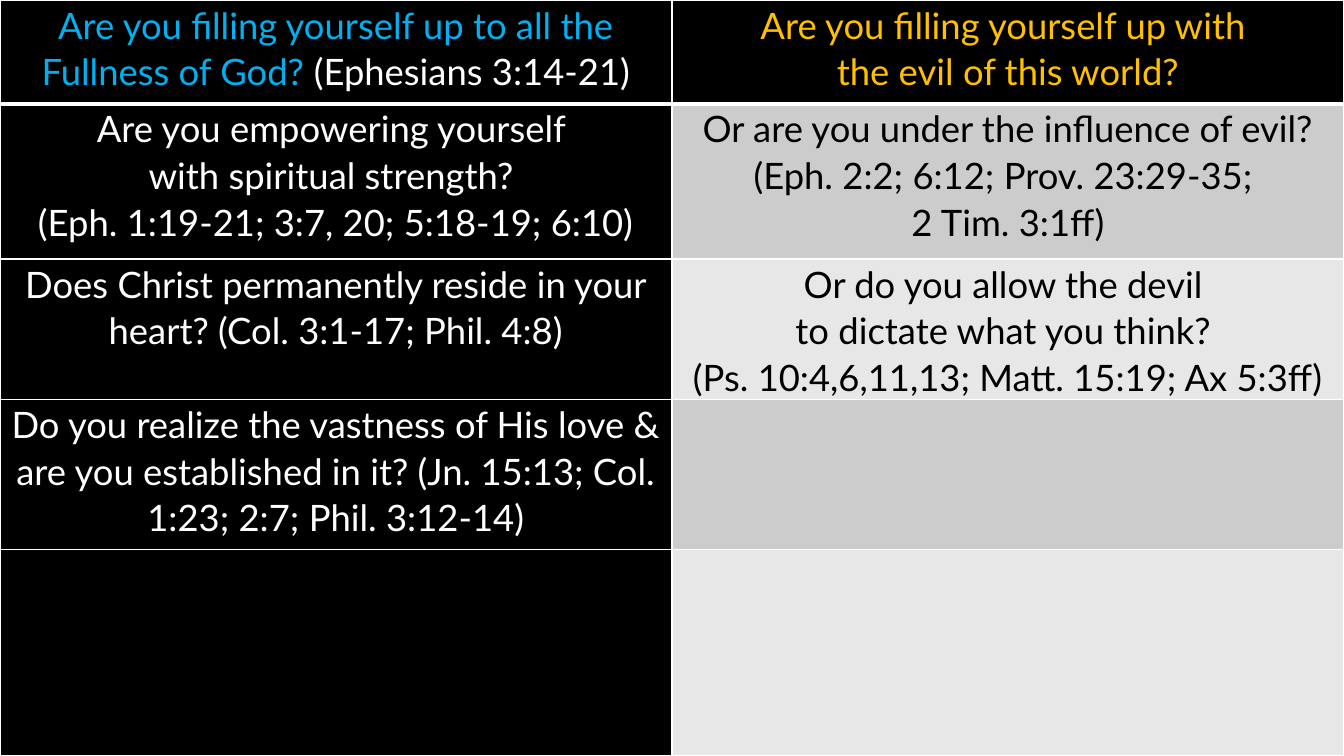
from dataclasses import dataclass

from lxml import etree
from pptx import Presentation, util as u
from pptx.dml.color import RGBColor
from pptx.enum import text
from pptx.oxml import ns


@dataclass(frozen=True)
class Theme:
    font: str = "Lato"
    size: float = 26
    lead: float = 1.07
    inset: float = 0.07
    thin: float = 1
    thick: float = 3
    black: str = "000000"
    white: str = "FFFFFF"
    blue: str = "00B0F0"
    gold: str = "FFC000"
    dark: str = "CCCCCC"
    light: str = "E7E7E7"


class Deck:
    def __init__(self, theme, width, height):
        self.theme = theme
        self.deck = Presentation()
        self.deck.slide_width = u.Inches(width)
        self.deck.slide_height = u.Inches(height)
        self.slide = None

    def page(self, color):
        self.slide = self.deck.slides.add_slide(self.deck.slide_layouts[6])
        fill = self.slide.background.fill
        fill.solid()
        fill.fore_color.rgb = RGBColor.from_string(color)

    def grid(self, cols, rows):
        width, height = self.deck.slide_width, self.deck.slide_height
        frame = self.slide.shapes.add_table(len(rows), len(cols), 0, 0, width, height)
        table = frame.table
        table.first_row = table.horz_banding = False
        for col, share in zip(table.columns, cols):
            col.width = int(width * share / sum(cols))
        for row, share in zip(table.rows, rows):
            row.height = int(height * share / sum(rows))
        return table

    def cell(self, cell, lines, fill, edges):
        side = u.Inches(self.theme.inset)
        cell.margin_left = cell.margin_right = side
        cell.margin_top = cell.margin_bottom = 0
        cell.fill.solid()
        cell.fill.fore_color.rgb = RGBColor.from_string(fill)
        self.edge(cell, edges)
        frame = cell.text_frame
        for i, line in enumerate(lines):
            para = frame.add_paragraph() if i else frame.paragraphs[0]
            para.alignment = text.PP_ALIGN.CENTER
            para.line_spacing = self.theme.lead
            for words, color in line:
                self.run(para, words, color)

    def run(self, para, words, color):
        run = para.add_run()
        run.text = words
        run.font.name = self.theme.font
        run.font.size = u.Pt(self.theme.size)
        run.font.color.rgb = RGBColor.from_string(color)

    def edge(self, cell, edges):
        props = cell._tc.get_or_add_tcPr()
        for i, (side, width) in enumerate(edges.items()):
            line = etree.Element(ns.qn(f"a:ln{side}"), w=str(u.Pt(width)))
            fill = etree.SubElement(line, ns.qn("a:solidFill"))
            etree.SubElement(fill, ns.qn("a:srgbClr"), val=self.theme.white)
            props.insert(i, line)

    def save(self):
        self.deck.save("out.pptx")


def plain(color, *lines):
    return [[(line, color)] for line in lines]


def main():
    theme = Theme()
    deck = Deck(theme, 13.33, 7.5)
    deck.page(theme.black)
    good = [
        [[("Are you filling yourself up to all the Fullness of God? ", theme.blue),
          ("(Ephesians 3:14-21)", theme.white)]],
        plain(theme.white, "Are you empowering yourself ", "with spiritual strength? ",
              "(Eph. 1:19-21; 3:7, 20; 5:18-19; 6:10)"),
        plain(theme.white,
              "Does Christ permanently reside in your heart? (Col. 3:1-17; Phil. 4:8)"),
        plain(theme.white,
              "Do you realize the vastness of His love & are you established in it? "
              "(Jn. 15:13; Col. 1:23; 2:7; Phil. 3:12-14)"),
        [],
    ]
    evil = [
        plain(theme.gold, "Are you filling yourself up with ", "the evil of this world?"),
        plain(theme.black,
              "Or are you under the influence of evil? (Eph. 2:2; 6:12; Prov. 23:29-35; ",
              "2 Tim. 3:1ff)"),
        plain(theme.black, "Or do you allow the devil ", "to dictate what you think? ",
              "(Ps. 10:4,6,11,13; Matt. 15:19; Ax 5:3ff)"),
        [],
        [],
    ]
    table = deck.grid([1, 1], [1.03, 1.54, 1.39, 1.49, 2.05])
    for row, pair in enumerate(zip(good, evil)):
        band = theme.dark if row % 2 else theme.light
        fills = (theme.black, band if row else theme.black)
        edges = dict.fromkeys("LRTB", theme.thin)
        if row < 2:
            edges["T" if row else "B"] = theme.thick
        for col, (lines, fill) in enumerate(zip(pair, fills)):
            deck.cell(table.cell(row, col), lines, fill, edges)
    deck.save()


if __name__ == "__main__":
    main()
